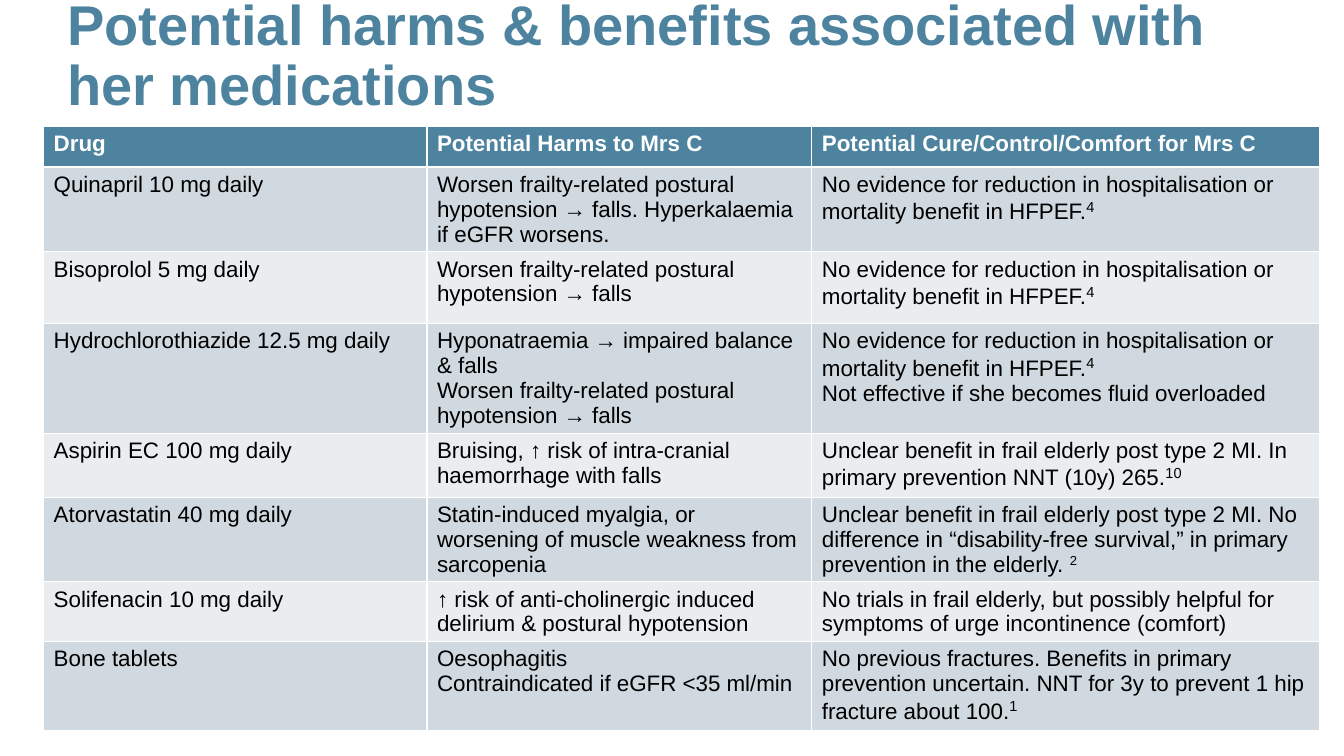
"""Build a slide with a table of the harms and benefits of each drug."""
from dataclasses import dataclass

from pptx import Presentation
from pptx.dml.color import RGBColor
from pptx.enum.text import MSO_ANCHOR, MSO_AUTO_SIZE
from pptx.util import Cm, Pt


@dataclass(frozen=True)
class Theme:
    face: str = "Arial"
    teal: str = "4D839F"
    white: str = "FFFFFF"
    black: str = "000000"
    bands: tuple = ("D0D9DF", "E9EDF0")
    title: int = 40
    body: int = 16
    note: int = 18


theme = Theme()


def add_run(para, text, size, color, bold=False):
    run = para.add_run()
    run.text = text
    font = run.font
    font.name, font.size, font.bold = theme.face, Pt(size), bold
    font.color.rgb = RGBColor.from_string(color)
    return run


def fill_cell(cell, lines, back, color, bold=False):
    cell.fill.solid()
    cell.fill.fore_color.rgb = RGBColor.from_string(back)
    frame = cell.text_frame
    for pos, line in enumerate(lines.split("\n")):
        para = frame.add_paragraph() if pos else frame.paragraphs[0]
        add_run(para, line, theme.body, color, bold)


heads = ("Drug", "Potential Harms to Mrs C", "Potential Cure/Control/Comfort for Mrs C")
heart = "No evidence for reduction in hospitalisation or mortality benefit in HFPEF."
falls = "Worsen frailty-related postural hypotension → falls"
frail = "Unclear benefit in frail elderly post type 2 MI. "
drugs = (
    ("Quinapril 10 mg daily", falls + ". Hyperkalaemia if eGFR worsens.",
     heart, "4", theme.note),
    ("Bisoprolol 5 mg daily", falls, heart, "4", theme.note),
    ("Hydrochlorothiazide 12.5 mg daily",
     "Hyponatraemia → impaired balance & falls\n" + falls,
     heart + "\nNot effective if she becomes fluid overloaded", "4", theme.note),
    ("Aspirin EC 100 mg daily",
     "Bruising, ↑ risk of intra-cranial haemorrhage with falls",
     frail + "In primary prevention NNT (10y) 265.", "10", theme.note),
    ("Atorvastatin 40 mg daily",
     "Statin-induced myalgia, or worsening of muscle weakness from sarcopenia",
     frail + "No difference in “disability-free survival,” "
     "in primary prevention in the elderly. ", "2", theme.body),
    ("Solifenacin 10 mg daily",
     "↑ risk of anti-cholinergic induced delirium & postural hypotension",
     "No trials in frail elderly, but possibly helpful for symptoms "
     "of urge incontinence (comfort)", "", theme.note),
    ("Bone tablets", "Oesophagitis\nContraindicated if eGFR <35 ml/min",
     "No previous fractures. Benefits in primary prevention uncertain. "
     "NNT for 3y to prevent 1 hip fracture about 100.", "1", theme.note),
)
widths = (9.66, 9.7, 12.8)
heights = (1.03, 2.13, 1.8, 2.77, 1.61, 2.13, 1.5, 2.23)

deck = Presentation()
deck.slide_width, deck.slide_height = Cm(33.87), Cm(19.05)
slide = deck.slides.add_slide(deck.slide_layouts[6])

box = slide.shapes.add_textbox(Cm(1.7), Cm(0.36), Cm(30), Cm(3.02))
frame = box.text_frame
frame.word_wrap = True
frame.auto_size = MSO_AUTO_SIZE.NONE
frame.vertical_anchor = MSO_ANCHOR.BOTTOM
frame.margin_left = frame.margin_right = 0
frame.margin_top = frame.margin_bottom = Cm(0.41)
para = frame.paragraphs[0]
para.line_spacing = 0.9
add_run(para, "Potential harms & benefits associated with her medications",
        theme.title, theme.teal, True)

table = slide.shapes.add_table(
    len(heights), len(widths), Cm(1.1), Cm(3.18), Cm(sum(widths)), Cm(sum(heights))
).table
for col, width in zip(table.columns, widths):
    col.width = Cm(width)
for row, height in zip(table.rows, heights):
    row.height = Cm(height)

for col, head in enumerate(heads):
    fill_cell(table.cell(0, col), head, theme.teal, theme.white, True)
for row, (*texts, note, size) in enumerate(drugs, 1):
    for col, text in enumerate(texts):
        fill_cell(table.cell(row, col), text, theme.bands[(row - 1) % 2], theme.black)
    if note:
        para = table.cell(row, 2).text_frame.paragraphs[0]
        run = add_run(para, note, size, theme.black)
        run.font._element.set("baseline", "30000")

deck.save("out.pptx")
